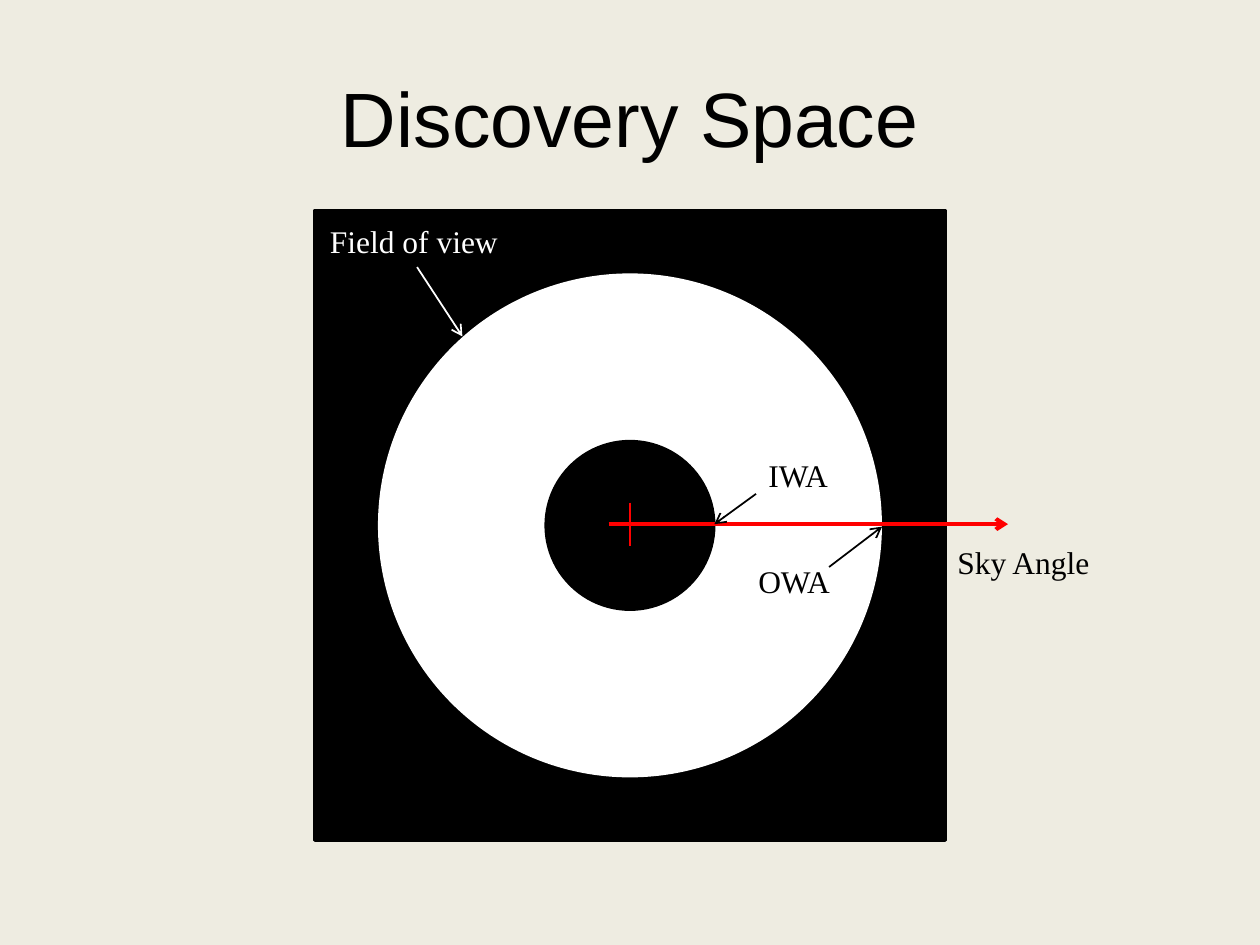
import pptx
import pptx.util
from pptx.dml.color import RGBColor
from pptx.enum.shapes import MSO_CONNECTOR, MSO_SHAPE
from pptx.enum.text import MSO_ANCHOR, MSO_AUTO_SIZE, PP_ALIGN
from pptx.oxml.ns import qn
from pptx.util import Inches, Pt
from lxml import etree

BEIGE = RGBColor(0xEE, 0xEC, 0xE1)
BLACK = RGBColor(0, 0, 0)
WHITE = RGBColor(0xFF, 0xFF, 0xFF)
RED = RGBColor(0xFF, 0, 0)

TITLE = "Discovery Space"
CENTER_X, CENTER_Y = 5, 4.17

# preset, size, fill, outline width in points
AREAS = [
    (MSO_SHAPE.RECTANGLE, 5, BLACK, 2),
    (MSO_SHAPE.OVAL, 4, WHITE, 0),
    (MSO_SHAPE.OVAL, 1.33, BLACK, 2),
]
# start, end, colour, width in points, arrowhead at end
LINES = [
    ((5, 3.99), (5, 4.33), RED, 0.75, False),
    ((4.83, 4.16), (8, 4.16), RED, 2.25, True),
    ((6, 3.92), (5.67, 4.16), BLACK, 1, True),
    ((6.58, 4.5), (7, 4.18), BLACK, 1, True),
    ((3.31, 2.12), (3.67, 2.67), WHITE, 1, True),
]
# text, left, top, width, height, colour
LABELS = [
    ("IWA", 6, 3.57, 0.83, 0.4, BLACK),
    ("OWA", 5.92, 4.41, 0.83, 0.4, BLACK),
    ("Field of view", 2.52, 1.71, 1.58, 0.42, WHITE),
    ("Sky Angle", 7.5, 4.26, 2.17, 0.4, BLACK),
]


def style_text(p, font, size, color):
    p.font.name = font
    p.font.size = Pt(size)
    p.font.color.rgb = color


def add_area(s, preset, size, fill, outline):
    """Add a shape centred on the common centre."""
    sp = s.shapes.add_shape(preset, Inches(CENTER_X - size / 2), Inches(CENTER_Y - size / 2),
                            Inches(size), Inches(size))
    sp.shadow.inherit = False
    sp.fill.solid()
    sp.fill.fore_color.rgb = fill
    if outline:
        sp.line.color.rgb = fill
        sp.line.width = Pt(outline)
    else:
        sp.line.fill.background()


def add_line(s, start, end, color, width, arrow):
    cx = s.shapes.add_connector(MSO_CONNECTOR.STRAIGHT, *map(Inches, start + end))
    cx.line.color.rgb = color
    cx.line.width = Pt(width)
    if arrow:
        etree.SubElement(cx.line._get_or_add_ln(), qn("a:tailEnd"), type="arrow")
    etree.SubElement(cx._element.spPr, qn("a:effectLst"))


def add_label(s, text, left, top, width, height, color):
    tf = s.shapes.add_textbox(*map(Inches, (left, top, width, height))).text_frame
    tf.word_wrap = True
    tf.auto_size = MSO_AUTO_SIZE.SHAPE_TO_FIT_TEXT
    p = tf.paragraphs[0]
    p.text = text
    style_text(p, "Times New Roman", 18, color)


def main():
    prs = pptx.Presentation()
    prs.slide_width, prs.slide_height = Inches(10), Inches(7.5)
    s = prs.slides.add_slide(prs.slide_layouts[5])
    s.background.fill.solid()
    s.background.fill.fore_color.rgb = BEIGE

    title = s.shapes.title
    title.left, title.top, title.width, title.height = map(Inches, (0.5, 0.3, 9, 1.25))
    title.text_frame.text = TITLE
    title.text_frame.vertical_anchor = MSO_ANCHOR.MIDDLE
    p = title.text_frame.paragraphs[0]
    p.alignment = PP_ALIGN.CENTER
    style_text(p, "Arial", 44, BLACK)

    for area in AREAS:
        add_area(s, *area)
    for line in LINES:
        add_line(s, *line)
    for label in LABELS:
        add_label(s, *label)
    prs.save("out.pptx")


if __name__ == "__main__":
    main()
